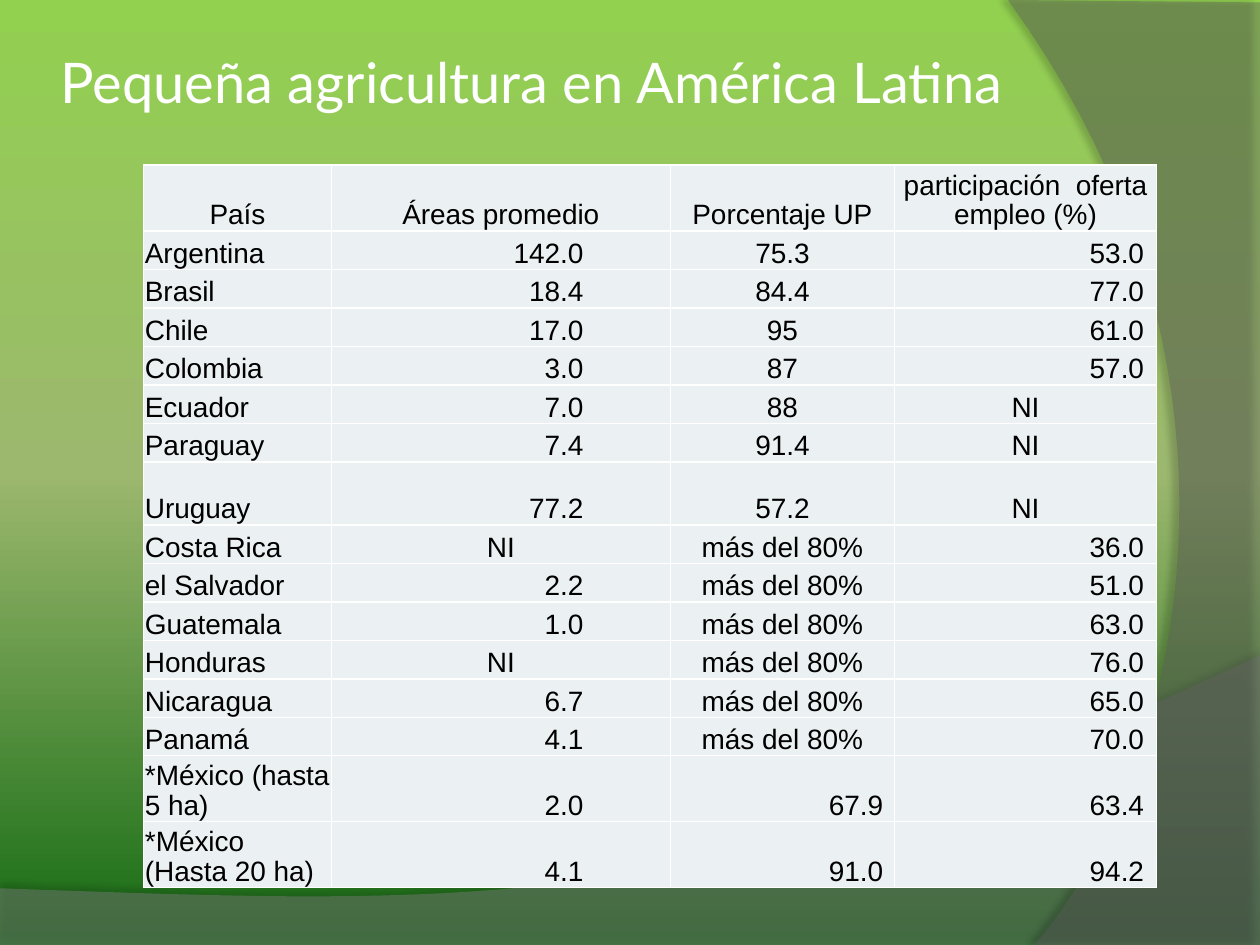
from dataclasses import dataclass

from lxml import etree
from pptx import Presentation
from pptx import util as u
from pptx.dml.color import RGBColor
from pptx.enum import text
from pptx.oxml import parse_xml
from pptx.oxml.ns import nsdecls, qn


@dataclass(frozen=True)
class Theme:
    gradient: tuple = ((0, "92D050"), (50, "9CB86E"), (100, "156B13"))
    title_font: str = "Lato"
    title_size: int = 32
    title_color: str = "FFFFFF"
    table_font: str = "Arial"
    table_size: int = 16
    table_color: str = "000000"
    cell_fill: str = "EBF0F2"
    border: str = "FFFFFF"


@dataclass(frozen=True)
class Wave:
    """A translucent outline; six-number points are cubic curves."""
    start: tuple
    steps: tuple
    color: str
    opacity: int
    shadow_opacity: int
    shadow_distance: float
    shadow_angle: int


@dataclass(frozen=True)
class Column:
    title: str
    width: float
    number_inset: float  # gap to the right of right-aligned numbers


THEME = Theme()

WAVES = (
    Wave((0, 7.05), ((0, 7.51), (10, 7.51), (10, 5.2),
                     (5.59, 7.29, 3.91, 7.19, 0, 7.05)),
         "7F7F7F", 45, 35, 3.5, 270),
    Wave((10, 0.02), ((10, 7.5), (8.21, 7.5),
                      (9.35, 6.19, 10.18, 3, 8, 0), (10, 0.02)),
         "5E5E5E", 40, 45, 4, 180),
)

COLUMNS = (
    Column("País", 1.49, 0),
    Column("Áreas promedio", 2.69, 0.69),
    Column("Porcentaje UP", 1.78, 0.09),
    Column("participación  oferta empleo (%)", 2.08, 0.1),
)

MOST = "más del 80%"
COUNTRIES = (
    ("Argentina", "142.0", "75.3", "53.0"),
    ("Brasil", "18.4", "84.4", "77.0"),
    ("Chile", "17.0", "95", "61.0"),
    ("Colombia", "3.0", "87", "57.0"),
    ("Ecuador", "7.0", "88", "NI"),
    ("Paraguay", "7.4", "91.4", "NI"),
    ("Uruguay", "77.2", "57.2", "NI"),
    ("Costa Rica", "NI", MOST, "36.0"),
    ("el Salvador", "2.2", MOST, "51.0"),
    ("Guatemala", "1.0", MOST, "63.0"),
    ("Honduras", "NI", MOST, "76.0"),
    ("Nicaragua", "6.7", MOST, "65.0"),
    ("Panamá", "4.1", MOST, "70.0"),
    ("*México (hasta 5 ha)", "2.0", "67.9", "63.4"),
    ("*México (Hasta 20 ha)", "4.1", "91.0", "94.2"),
)
TALL_ROWS = {0, 7, 14, 15}
TABLE_HEIGHT = 5.67
TALL_HEIGHT = 0.5


def rgb(color: str) -> RGBColor:
    return RGBColor.from_string(color)


def paint_background(page) -> None:
    fill = page.background.fill
    fill.gradient()
    fill.gradient_angle = 270
    stops = next(page.element.iter(qn("a:gsLst")))
    for stop in list(stops):
        stops.remove(stop)
    for position, color in THEME.gradient:
        stop = etree.SubElement(stops, qn("a:gs"), pos=str(position * 1000))
        etree.SubElement(stop, qn("a:srgbClr"), val=color)


def curve(start: tuple, step: tuple, pieces: int = 40) -> list:
    """Points along a cubic curve, after its start."""
    knots = (start, step[:2], step[2:4], step[4:])
    points = []
    for piece in range(1, pieces + 1):
        t = piece / pieces
        weights = ((1 - t) ** 3, 3 * t * (1 - t) ** 2, 3 * t * t * (1 - t), t ** 3)
        points.append(tuple(sum(w * knot[axis] for w, knot in zip(weights, knots))
                            for axis in (0, 1)))
    return points


def draw_wave(page, wave: Wave) -> None:
    points = [wave.start]
    for step in wave.steps:
        points += curve(points[-1], step) if len(step) == 6 else [step]
    corners = [(u.Inches(x), u.Inches(y)) for x, y in points]
    builder = page.shapes.build_freeform(*corners[0])
    builder.add_line_segments(corners[1:], close=True)
    shape = builder.convert_to_shape()
    shape.line.fill.background()
    shape.fill.solid()
    shape.fill.fore_color.rgb = rgb(wave.color)
    color = next(shape.element.spPr.iter(qn("a:srgbClr")))
    etree.SubElement(color, qn("a:alpha"), val=str(wave.opacity * 1000))
    shape.shadow.inherit = False
    effects = shape.element.spPr.find(qn("a:effectLst"))
    shadow = etree.SubElement(
        effects, qn("a:outerShdw"), blurRad=str(u.Pt(4)),
        dist=str(u.Pt(wave.shadow_distance)), dir=str(wave.shadow_angle * 60000),
        algn="ctr", rotWithShape="0")
    tint = etree.SubElement(shadow, qn("a:srgbClr"), val="000000")
    etree.SubElement(tint, qn("a:alpha"), val=str(wave.shadow_opacity * 1000))


def style_font(para, name: str, size: int, color: str) -> None:
    para.font.name = name
    para.font.size = u.Pt(size)
    para.font.color.rgb = rgb(color)


def draw_title(page, words: str) -> None:
    box = page.shapes.add_textbox(u.Inches(0.43), u.Inches(0.3),
                                  u.Inches(8.9), u.Inches(0.69))
    frame = box.text_frame
    frame.word_wrap = True
    frame.vertical_anchor = text.MSO_ANCHOR.MIDDLE
    frame.margin_left = frame.margin_right = u.Inches(0.05)
    frame.margin_top = frame.margin_bottom = u.Inches(0.05)
    frame.text = words
    style_font(frame.paragraphs[0], THEME.title_font, THEME.title_size, THEME.title_color)


def add_borders(cell) -> None:
    properties = cell._tc.get_or_add_tcPr()
    for index, side in enumerate(("lnL", "lnR", "lnT", "lnB")):
        properties.insert(index, parse_xml(
            f'<a:{side} {nsdecls("a")} w="{u.Pt(1)}"><a:solidFill>'
            f'<a:srgbClr val="{THEME.border}"/></a:solidFill></a:{side}>'))


def fill_cell(cell, words: str, align, right_inset: float) -> None:
    cell.fill.solid()
    cell.fill.fore_color.rgb = rgb(THEME.cell_fill)
    add_borders(cell)
    cell.vertical_anchor = text.MSO_ANCHOR.BOTTOM
    cell.margin_left = cell.margin_top = u.Inches(0.01)
    cell.margin_right = u.Inches(right_inset)
    cell.margin_bottom = 0
    cell.text = words
    para = cell.text_frame.paragraphs[0]
    para.alignment = align
    para.line_spacing = 0.96
    style_font(para, THEME.table_font, THEME.table_size, THEME.table_color)


def draw_table(page) -> None:
    rows = (tuple(column.title for column in COLUMNS),) + COUNTRIES
    width = sum(column.width for column in COLUMNS)
    table = page.shapes.add_table(len(rows), len(COLUMNS), u.Inches(1.14), u.Inches(1.31),
                                  u.Inches(width), u.Inches(TABLE_HEIGHT)).table
    table.first_row = table.horz_banding = False
    for index, column in enumerate(COLUMNS):
        table.columns[index].width = u.Inches(column.width)
    short = (TABLE_HEIGHT - TALL_HEIGHT * len(TALL_ROWS)) / (len(rows) - len(TALL_ROWS))
    for row, values in enumerate(rows):
        table.rows[row].height = u.Inches(TALL_HEIGHT if row in TALL_ROWS else short)
        for index, (column, words) in enumerate(zip(COLUMNS, values)):
            align, inset = text.PP_ALIGN.CENTER, 0.01
            if row and index == 0:
                align = text.PP_ALIGN.LEFT
            # The third column sets only the Mexican figures to the right
            elif words[0].isdigit() and (index != 2 or values[0].startswith("*")):
                align, inset = text.PP_ALIGN.RIGHT, column.number_inset
            fill_cell(table.cell(row, index), words, align, inset)


def main() -> None:
    deck = Presentation()
    deck.slide_width, deck.slide_height = u.Inches(10), u.Inches(7.5)
    page = deck.slides.add_slide(deck.slide_layouts[6])
    # Backdrop
    paint_background(page)
    for wave in WAVES:
        draw_wave(page, wave)
    # Content
    draw_title(page, "Pequeña agricultura en América Latina")
    draw_table(page)
    deck.save("out.pptx")


if __name__ == "__main__":
    main()
